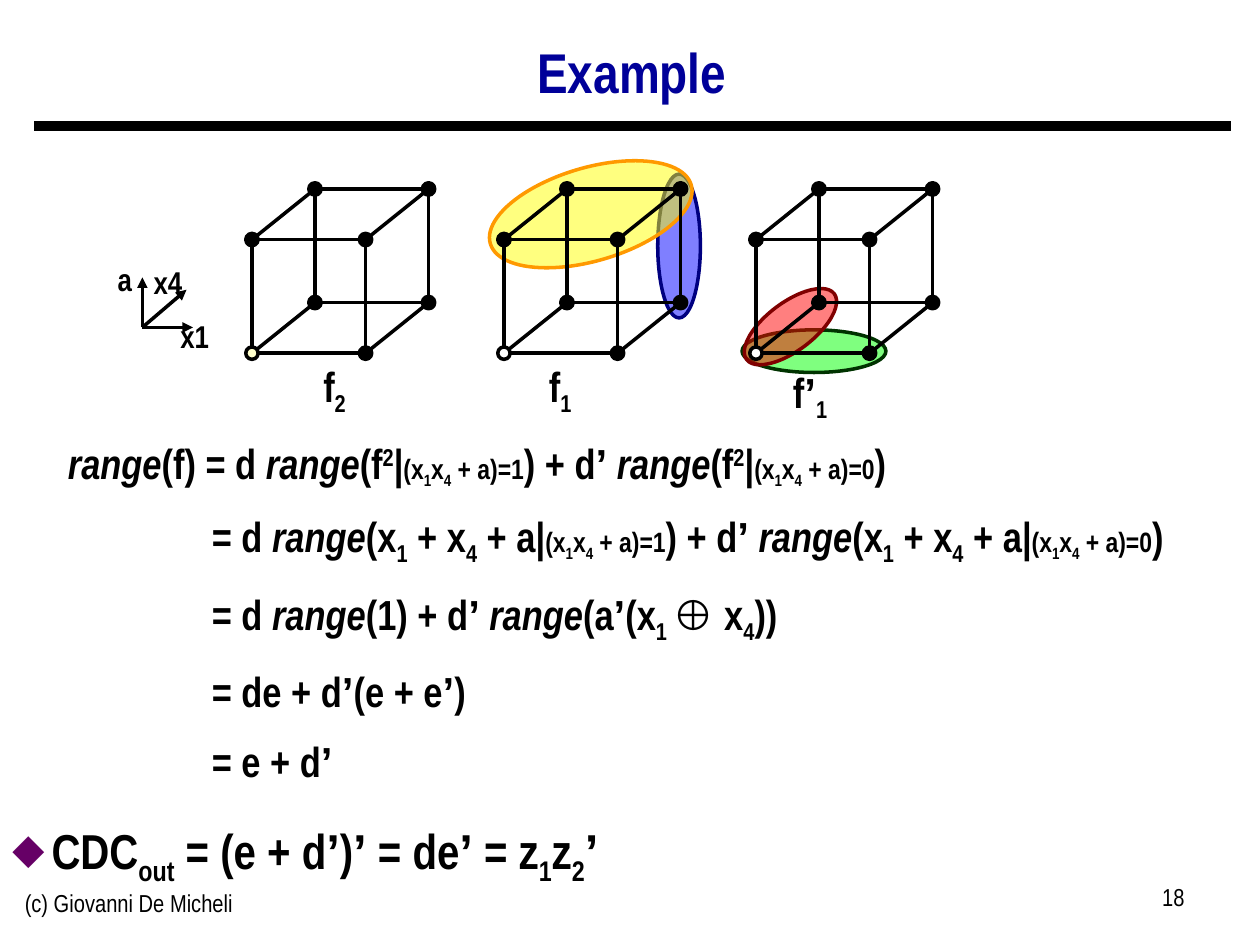
from lxml import etree
from pptx import Presentation
from pptx.dml.color import RGBColor
from pptx.enum.shapes import MSO_CONNECTOR, MSO_SHAPE
from pptx.enum.text import MSO_ANCHOR, PP_ALIGN
from pptx.oxml.ns import qn
from pptx.util import Cm, Pt

LINE = MSO_CONNECTOR.STRAIGHT
OVAL, RECT = MSO_SHAPE.OVAL, MSO_SHAPE.RECTANGLE
LEFT, MID, RIGHT = PP_ALIGN.LEFT, PP_ALIGN.CENTER, PP_ALIGN.RIGHT

COLORS = {
    "ink": "000000", "title": "000099", "bullet": "660066",
    "white": "FFFFFF", "cream": "FFFFCC",
    "blue": "0000FF", "navy": "000080", "yellow": "FFFF00", "orange": "FF9900",
    "green": "00FF00", "forest": "003300", "red": "FF0000", "maroon": "800000",
}
RGB = {name: RGBColor.from_string(code) for name, code in COLORS.items()}

# One letter per run style: italic, Arial, small
STYLES = {"i": {"italic": True}, "a": {"name": "Arial"}, "k": {"size": Pt(16)}}
BASES = {"s": "-25000", "u": "30000"}  # subscript, superscript


def write(par, runs, size, bold=True, color="ink"):
    """Fill a paragraph with (text, style letters) runs."""
    for text, marks in runs:
        run = par.add_run()
        run.text = text
        look = {"name": "Arial Narrow", "size": Pt(size), "bold": bold}
        for mark in marks:
            look.update(STYLES.get(mark, {}))
            if mark in BASES:
                run.font._element.set("baseline", BASES[mark])
        for key, value in look.items():
            setattr(run.font, key, value)
        run.font.color.rgb = RGB[color]


def draw(kind, box, fill, edge):
    shape = slide.shapes.add_shape(kind, *[Cm(v) for v in box])
    shape.shadow.inherit = False
    if fill:
        shape.fill.solid()
        shape.fill.fore_color.rgb = RGB[fill]
    else:
        shape.fill.background()
    shape.line.color.rgb = RGB[edge]
    shape.line.width = Pt(2)
    return shape


deck = Presentation()
deck.slide_width, deck.slide_height = Cm(25.4), Cm(19.05)
slide = deck.slides.add_slide(deck.slide_layouts[5])

# Title
title = slide.shapes.title
place = {"left": 0.66, "top": 0.56, "width": 24.16, "height": 1.91}
for key, value in place.items():
    setattr(title, key, Cm(value))
title.text_frame.vertical_anchor = MSO_ANCHOR.MIDDLE
head = title.text_frame.paragraphs[0]
head.alignment, head.line_spacing = MID, 0.9
write(head, [("Example", "")], 32, color="title")

# Derivation
range_, prime = ("range", "i"), ("’ ", "a")
tick = ("’", "a")
where = [("(x", "k"), ("1", "ks"), ("x", "k"), ("4", "ks")]
one, zero = [where + [(f" + a)={n}", "k")] for n in (1, 0)]
square = [("(f", ""), ("2", "u"), ("|", "")]
total = [("(x", ""), ("1", "s"), (" + x", ""), ("4", "s"), (" + a|", "")]
then = [(") + d", ""), prime, range_]
end = [(")", "")]

# Each row: runs, size, left margin, first indent, line spacing, space before
rows = [
    ([range_, ("(f) = d ", ""), range_] + square + one + then + square + zero + end,
     24, 1.12, 0, 1.1, 0),
    ([("= d ", ""), range_] + total + one + then + total + zero + end,
     24, 4.02, 0, 1.1, 8.5),
    ([("= d ", ""), range_, ("(1) + d", ""), prime, range_, ("(a", ""), tick,
      ("(x", ""), ("1 ", "s"), ("⊕ x", ""), ("4", "s"), ("))", "")],
     24, 4.02, 0, 1.1, 8.5),
    ([("= de + d", ""), tick, ("(e + e", ""), tick] + end, 24, 4.02, 0, 1.1, 8.5),
    ([("= e + d", ""), tick], 24, 4.02, 0, 1.1, 8.5),
    ([("CDC", ""), ("out", "s"), (" = (e + d", ""), tick, (")", ""), tick,
      (" = de", ""), tick, (" = z", ""), ("1", "s"), ("z", ""), ("2", "s"), tick],
     28, 0.79, -0.79, 1.25, 10),
]
body = slide.shapes.add_textbox(Cm(0), Cm(8.59), Cm(24.79), Cm(9.4)).text_frame
body.word_wrap = True
for i, (runs, size, margin, indent, gap, before) in enumerate(rows):
    par = body.add_paragraph() if i else body.paragraphs[0]
    par.line_spacing, par.space_before = gap, Pt(before)
    props = par._p.get_or_add_pPr()
    props.set("marL", str(Cm(margin)))
    props.set("indent", str(Cm(indent)))
    if indent:
        tint = etree.SubElement(props, qn("a:buClr"))
        etree.SubElement(tint, qn("a:srgbClr"), val=COLORS["bullet"])
        etree.SubElement(props, qn("a:buSzPct"), val="85000")
        etree.SubElement(props, qn("a:buChar"), char="◆")
    write(par, runs, size)

# Translucent covers
for box, turn, fill, edge in [
    ((13.26, 3.51, 0.86, 2.9), 0, "blue", "navy"),
    ((9.8, 3.38, 4.22, 1.88), 343.7, "yellow", "orange"),
    ((14.96, 6.65, 2.9, 0.86), 0, "green", "forest"),
    ((14.83, 6.1, 2.21, 0.97), 323.1, "red", "maroon"),
]:
    cover = draw(OVAL, box, fill, edge)
    cover.rotation = turn
    tint = cover.element.spPr.find(".//" + qn("a:srgbClr"))
    etree.SubElement(tint, qn("a:alpha"), val="50000")

# Cubes: front and back squares, joined corner to corner
side, dx, dy, dot = 2.29, 1.27, -1.02, 0.25
top = 4.83
cubes = [(5.08, "cream"), (10.16, "white"), (15.24, "white")]
lines = [(0.69, 2.54, 24.82, 2.54, 6, False)]
lines += [(2.87, 6.6, x, y, 2, True)
          for x, y in [(3.89, 6.6), (2.87, 5.59), (3.76, 5.84)]]
dots = []
for left, hole in cubes:
    draw(RECT, (left, top, side, side), None, "ink")
    draw(RECT, (left + dx, top + dy, side, side), None, "ink")
    for x in (left, left + side):
        for y in (top, top + side):
            lines.append((x, y, x + dx, y + dy, 2, False))
            open_ = x == left and y > top
            dots += [(x, y, hole if open_ else "ink"), (x + dx, y + dy, "ink")]

for x1, y1, x2, y2, width, arrow in lines:
    link = slide.shapes.add_connector(LINE, Cm(x1), Cm(y1), Cm(x2), Cm(y2))
    link.line.color.rgb = RGB["ink"]
    link.line.width = Pt(width)
    if arrow:
        etree.SubElement(link.line._get_or_add_ln(), qn("a:tailEnd"), type="triangle")
    etree.SubElement(link.element.spPr, qn("a:effectLst"))

for x, y, fill in dots:
    draw(OVAL, (x - dot / 2, y - dot / 2, dot, dot), fill, "ink")

# Labels and footer
for box, runs, size, bold, align in [
    ((3.38, 6.27, 1.09, 1.02), [("x1", "")], 18, True, MID),
    ((2.84, 5.18, 1.09, 1.02), [("x4", "")], 18, True, MID),
    ((2.11, 5.11, 0.81, 1.02), [("a", "")], 18, True, MID),
    ((6.25, 7.14, 0.99, 1.27), [("f", ""), ("2", "s")], 24, True, MID),
    ((10.8, 7.14, 0.99, 1.27), [("f", ""), ("1", "s")], 24, True, MID),
    ((15.11, 7.26, 2.44, 1.27), [("f", ""), tick, ("1", "s")], 24, True, MID),
    ((0.25, 17.78, 8.05, 1.32), [("(c) Giovanni De Micheli", "")], 14, False, LEFT),
    ((18.21, 17.65, 5.92, 1.32), [("18", "")], 14, False, RIGHT),
]:
    frame = slide.shapes.add_textbox(*[Cm(v) for v in box]).text_frame
    frame.word_wrap = box[2] > 2
    par = frame.paragraphs[0]
    par.alignment = align
    write(par, runs, size, bold)

deck.save("out.pptx")
